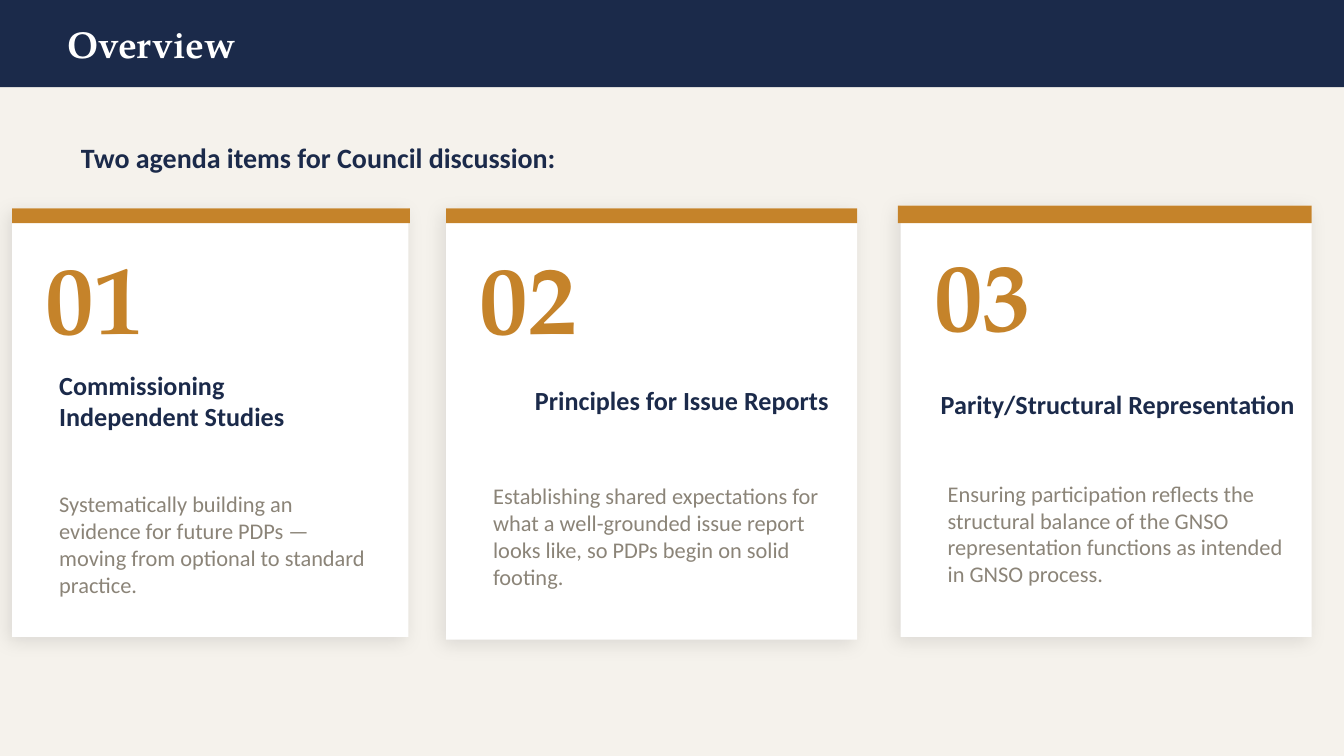
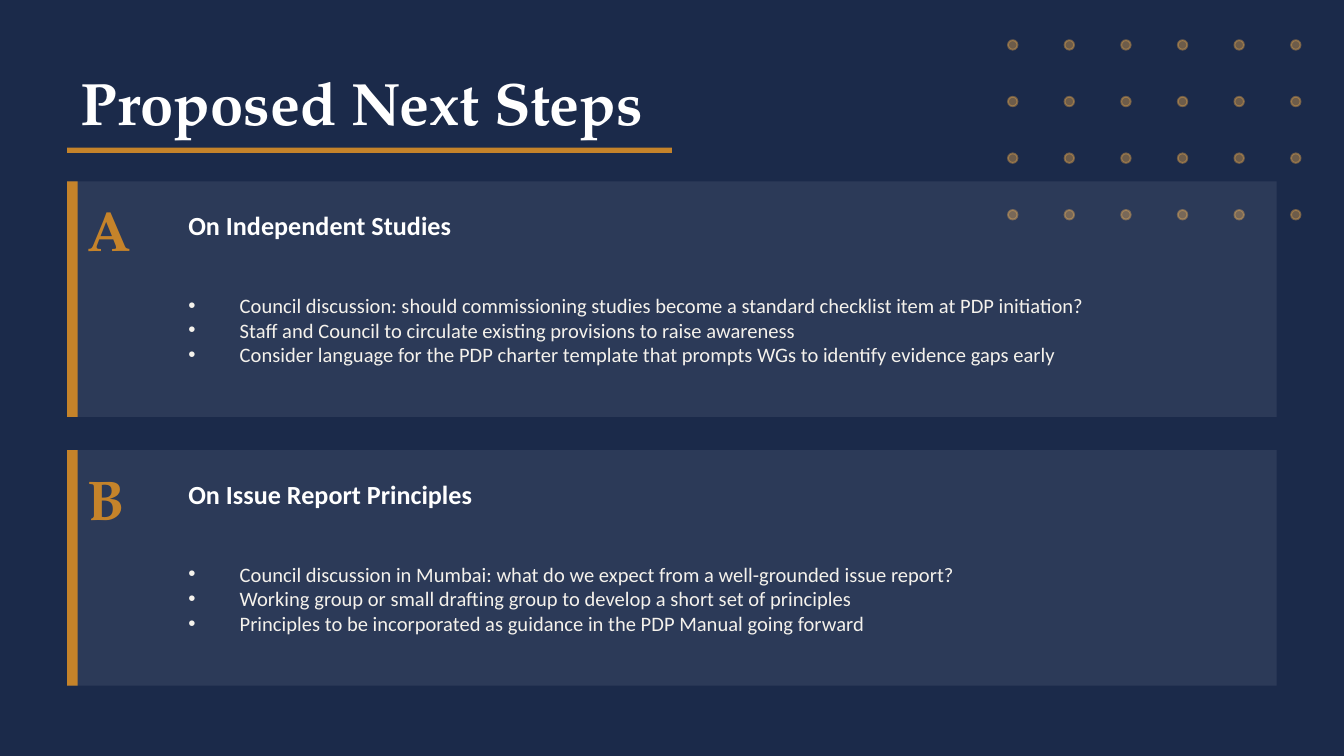
import pptx
import pptx.util
import pptx.dml.color
import pptx.enum.shapes
import pptx.enum.text
import pptx.oxml.ns
import lxml.etree

HUES = {
    "navy": "1B2A4A",
    "gold": "C5832A",
    "amber": "E8A84C",
    "cream": "F5F2EC",
    "white": "FFFFFF",
    "stone": "8B8478",
    "black": "000000",
}
SERIF, SANS = "TeX Gyre Pagella", "Calibri"
STYLES = {
    "title": (SERIF, 20, "white", True),
    "hero": (SERIF, 32, "white", True),
    "lead": (SANS, 15, "navy", True),
    "number": (SERIF, 52, "gold", True),
    "head": (SANS, 14, "navy", True),
    "note": (SANS, 12, "stone", False),
    "letter": (SERIF, 30, "gold", True),
    "topic": (SANS, 14, "white", True),
    "list": (SANS, 11, "cream", False),
}
PAD = 0.13

CARDS = [
    {
        "number": "01",
        "card": (0.23, 3.94, 7.49, 8.1),
        "bar": (0.23, 7.52, 0.28),
        "head": ("Commissioning Independent Studies", (0.99, 6.86, 6.12, 1.42)),
        "note": ("Systematically building an evidence for future PDPs — moving "
                 "from optional to standard practice.", (0.99, 9.14, 6.12, 2.29)),
    },
    {
        "number": "02",
        "card": (8.43, 3.94, 7.77, 8.15),
        "bar": (8.43, 7.77, 0.28),
        "head": ("Principles for Issue Reports", (9.98, 7.16, 9.65, 0.79)),
        "note": ("Establishing shared expectations for what a well-grounded issue "
                 "report looks like, so PDPs begin on solid footing.",
                 (9.19, 8.99, 6.99, 2.29)),
    },
    {
        "number": "03",
        "card": (17.02, 3.89, 7.77, 8.15),
        "bar": (16.97, 7.82, 0.33),
        "head": ("Parity/Structural Representation", (17.65, 7.24, 9.65, 0.79)),
        "note": ("Ensuring participation reflects the structural balance of the "
                 "GNSO representation functions as intended in GNSO process.",
                 (17.78, 8.94, 6.99, 2.29)),
    },
]

STEPS = [
    ("A", "On Independent Studies", [
        "Council discussion: should commissioning studies become a standard "
        "checklist item at PDP initiation?",
        "Staff and Council to circulate existing provisions to raise awareness",
        "Consider language for the PDP charter template that prompts WGs to "
        "identify evidence gaps early",
    ]),
    ("B", "On Issue Report Principles", [
        "Council discussion in Mumbai: what do we expect from a well-grounded "
        "issue report?",
        "Working group or small drafting group to develop a short set of principles",
        "Principles to be incorporated as guidance in the PDP Manual going forward",
    ]),
]


def cms(box):
    return [pptx.util.Cm(side) for side in box]


def tint(name):
    return pptx.dml.color.RGBColor.from_string(HUES[name])


def paint(slide, name):
    slide.background.fill.solid()
    slide.background.fill.fore_color.rgb = tint(name)


def draw(slide, box, hue, kind="RECTANGLE", edge=None, alpha=None):
    form = getattr(pptx.enum.shapes.MSO_SHAPE, kind)
    shape = slide.shapes.add_shape(form, *cms(box))
    shape.shadow.inherit = False
    shape.fill.solid()
    shape.fill.fore_color.rgb = tint(hue)
    if edge:
        shape.line.color.rgb = tint(hue)
        shape.line.width = pptx.util.Pt(edge)
    else:
        shape.line.fill.background()
    if alpha:
        for color in shape.element.iter(pptx.oxml.ns.qn("a:srgbClr")):
            fade(color, alpha)
    return shape


def fade(color, alpha):
    lxml.etree.SubElement(color, pptx.oxml.ns.qn("a:alpha"), val=str(alpha * 1000))


def shade(shape):
    qn = pptx.oxml.ns.qn
    effects = shape.element.spPr.find(qn("a:effectLst"))
    outer = lxml.etree.SubElement(
        effects, qn("a:outerShdw"), blurRad="127000", dist="38100",
        dir="8100000", algn="bl", rotWithShape="0")
    color = lxml.etree.SubElement(outer, qn("a:srgbClr"), val=HUES["black"])
    fade(color, 10)


def fit(shape, text, style, pad=PAD):
    face, size, hue, bold = STYLES[style]
    frame = shape.text_frame
    frame.text = text
    frame.word_wrap = True
    frame.auto_size = pptx.enum.text.MSO_AUTO_SIZE.SHAPE_TO_FIT_TEXT
    frame.vertical_anchor = pptx.enum.text.MSO_ANCHOR.MIDDLE
    frame.margin_left = frame.margin_right = pptx.util.Cm(pad)
    frame.margin_top = frame.margin_bottom = pptx.util.Cm(pad)
    for para in frame.paragraphs:
        para.alignment = pptx.enum.text.PP_ALIGN.LEFT
        para.space_before = pptx.util.Pt(0)
        for run in para.runs:
            run.font.name = face
            run.font.size = pptx.util.Pt(size)
            run.font.bold = bold
            run.font.color.rgb = tint(hue)


def write(slide, box, text, style, pad=PAD):
    fit(slide.shapes.add_textbox(*cms(box)), text, style, pad)


def place(holder, box, text, style):
    holder.left, holder.top, holder.width, holder.height = cms(box)
    fit(holder, text, style)
    holder.element.getparent().append(holder.element)


def indent(holder, size):
    for para in holder.text_frame.paragraphs:
        props = para._p.get_or_add_pPr()
        props.set("marL", str(pptx.util.Cm(size)))
        props.set("indent", str(-pptx.util.Cm(size)))


def add_card(slide, card):
    left, top, _, _ = card["card"]
    start, width, height = card["bar"]
    shade(draw(slide, card["card"], "white"))
    draw(slide, (start, top, width, height), "gold")
    write(slide, (left + 0.64, top + 0.56, 3.05, 2.18), card["number"], "number", 0)
    for part in ("head", "note"):
        text, box = card[part]
        write(slide, box, text, part)


def add_step(slide, holder, top, step):
    letter, topic, items = step
    draw(slide, (1.27, top, 22.86, 4.45), "white", alpha=8)
    draw(slide, (1.27, top, 0.2, 4.45), "gold")
    write(slide, (1.65, top + 0.25, 1.78, 1.3), letter, "letter", 0)
    write(slide, (3.43, top + 0.43, 19.56, 0.79), topic, "topic")
    place(holder, (3.43, top + 2.03, 20.07, 1.55), "\n".join(items), "list")
    indent(holder, 0.97)


def overview(deck):
    slide = deck.slides.add_slide(deck.slide_layouts[5])
    paint(slide, "cream")
    draw(slide, (0, 0, 25.4, 1.65), "navy")
    place(slide.shapes.title, (1.14, 0.28, 22.61, 1.09), "Overview", "title")
    write(slide, (1.4, 2.59, 22.61, 0.76),
          "Two agenda items for Council discussion:", "lead")
    for card in CARDS:
        add_card(slide, card)


def next_steps(deck):
    slide = deck.slides.add_slide(deck.slide_layouts[3])
    paint(slide, "navy")
    title, *lists = list(slide.placeholders)[:3]
    for col in range(6):
        for row in range(4):
            spot = (19.05 + col * 1.07, 0.76 + row * 1.07, 0.18, 0.18)
            draw(slide, spot, "amber", "OVAL", edge=1, alpha=40)
    place(title, (1.4, 1.12, 17.53, 1.6), "Proposed Next Steps", "hero")
    draw(slide, (1.27, 2.79, 11.43, 0.1), "gold")
    for rank, (holder, step) in enumerate(zip(lists, STEPS)):
        add_step(slide, holder, 3.43 + rank * 5.08, step)


def main():
    deck = pptx.Presentation()
    deck.slide_width, deck.slide_height = cms((25.4, 14.29))
    overview(deck)
    next_steps(deck)
    deck.save("out.pptx")


if __name__ == "__main__":
    main()
